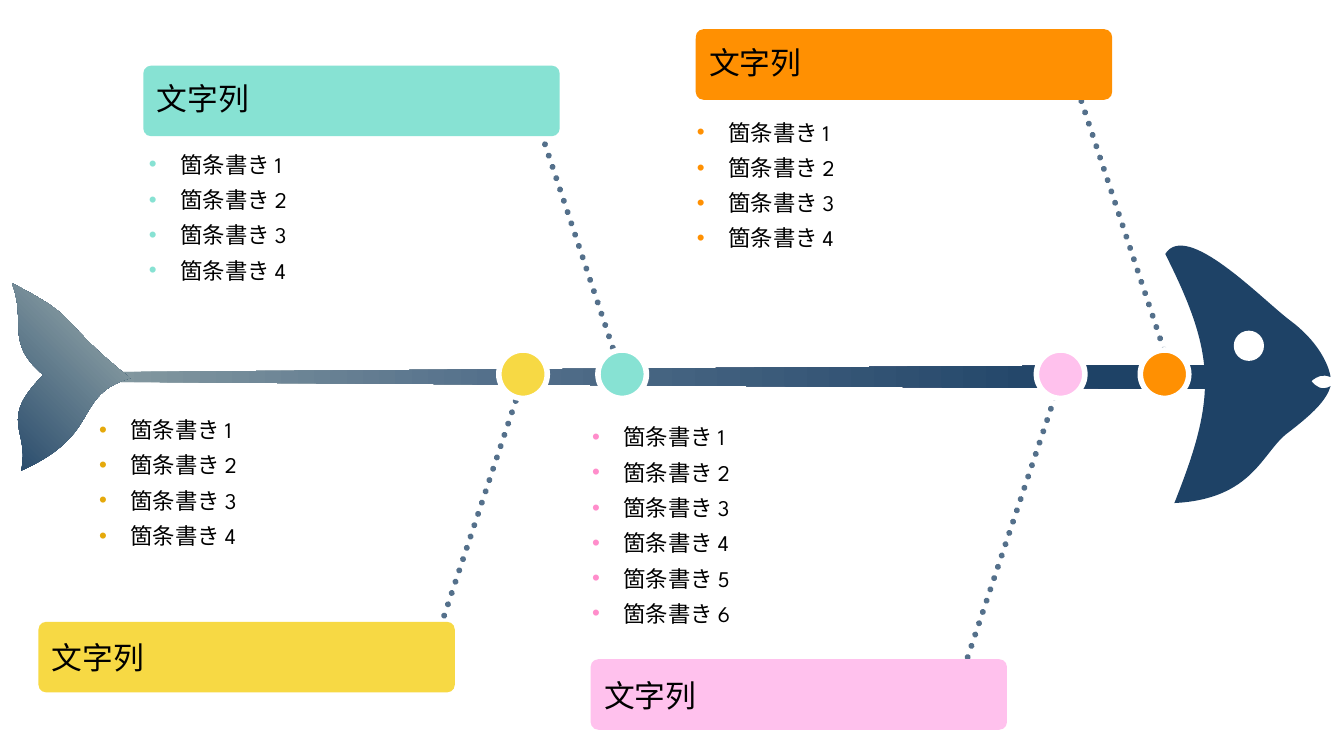
import math

import copy
import lxml.etree
import pptx
import pptx.dml.color
import pptx.enum.dml
import pptx.enum.shapes
import pptx.enum.text
import pptx.oxml.ns
import pptx.util

Pt = pptx.util.Pt
qn = pptx.oxml.ns.qn
MSO_SHAPE = pptx.enum.shapes.MSO_SHAPE
SHAPE_TO_FIT = pptx.enum.text.MSO_AUTO_SIZE.SHAPE_TO_FIT_TEXT


def color(value):
    return pptx.dml.color.RGBColor.from_string(value)


def add_outline(shapes, frame, rotation, start, segments):
    left, top, width, height = frame
    center_x, center_y = left + width / 2, top + height / 2
    cosine, sine = math.cos(math.radians(rotation)), math.sin(math.radians(rotation))
    builder = shapes.build_freeform(Pt(left), Pt(top))
    builder.add_line_segments([(Pt(left + width), Pt(top + height))], close=True)
    shape = builder.convert_to_shape()
    outline = next(shape._element.iter(qn("a:path")))
    for child in list(outline):
        outline.remove(child)
    for index, segment in enumerate([start, *segments]):
        tag = "a:moveTo" if index == 0 else "a:lnTo" if len(segment) == 2 else "a:cubicBezTo"
        command = lxml.etree.SubElement(outline, qn(tag))
        for x, y in zip(segment[::2], segment[1::2]):
            dx, dy = x - center_x, y - center_y
            local_x = Pt(width / 2 + dx * cosine + dy * sine)
            local_y = Pt(height / 2 - dx * sine + dy * cosine)
            lxml.etree.SubElement(command, qn("a:pt"), x=str(local_x), y=str(local_y))
    lxml.etree.SubElement(outline, qn("a:close"))
    shape.rotation = rotation
    shape.shadow.inherit = False
    shape.line.fill.background()
    return shape


presentation = pptx.Presentation()
presentation.slide_width = Pt(960)
presentation.slide_height = Pt(540)
slide = presentation.slides.add_slide(presentation.slide_layouts[6])

bones = [
    (314.6, 447.8, 372.2, 275),
    (386.6, 95, 444.2, 267.8),
    (691.2, 469.4, 755, 279),
    (769.7, 64.1, 835.3, 261.6),
]
for bone in bones:
    connector = slide.shapes.add_connector(
        pptx.enum.shapes.MSO_CONNECTOR.STRAIGHT, *[Pt(value) for value in bone]
    )
    connector.line.color.rgb = color("54708B")
    connector.line.width = Pt(4.25)
    connector.line.dash_style = pptx.enum.dml.MSO_LINE.ROUND_DOT
    properties = connector._element.spPr
    properties.find(qn("a:ln")).set("cap", "rnd")
    lxml.etree.SubElement(properties, qn("a:effectLst"))

spine = add_outline(slide.shapes, (72.7, 260.6, 799.2, 17.3), 0, (72.7, 269.3), [
    (73.4, 267.8, 80.6, 265.7, 85.7, 265.7),
    (863.3, 260.6),
    (868.3, 260.6, 871.9, 265, 871.9, 269.3),
    (871.9, 269.3),
    (871.9, 274.3, 868.3, 277.9, 863.3, 277.9),
    (82.8, 272.9),
    (77.8, 272.9, 72.7, 270.7, 72.7, 269.3),
])
head_group = slide.shapes.add_group_shape()
head = add_outline(head_group.shapes, (777.6, 192.2, 154.8, 151.9), 225, (936.7, 272.2), [
    (939.6, 275.8, 943.9, 279.4, 950.4, 275.8),
    (947.5, 285.8, 938.2, 295.2, 920.2, 308.9),
    (901.4, 322.6, 895.7, 356.4, 838.8, 359.3),
    (869, 283.7, 869, 254.2, 832.3, 181.4),
    (847.4, 157, 901.4, 213.8, 921.6, 229),
    (941, 243.4, 949, 259.9, 950.4, 269.3),
    (944.6, 267.1, 941, 268.6, 936.7, 272.2),
])
head.fill.solid()
head.fill.fore_color.rgb = color("1E4266")

eye = head_group.shapes.add_shape(MSO_SHAPE.OVAL, Pt(881.3), Pt(236.2), Pt(21.6), Pt(21.6))
eye.shadow.inherit = False
eye.fill.solid()
eye.fill.fore_color.rgb = color("FFFFFF")
eye.line.fill.background()

tail = add_outline(slide.shapes, (-35.3, 217.4, 108, 102.2), 225, (92.9, 270), [
    (51.1, 283, 74.2, 309.6, 15.1, 336.2),
    (21.6, 306, -2.2, 301, 31, 267.8),
    (2.9, 244.1, 19.4, 231.1, 8.6, 202.3),
    (60.5, 229, 38.2, 226.1, 92.9, 270),
])

gradients = [
    (spine, 0, [(0, "8499A0"), (0.35, "54708B"), (0.89, "1E4266")]),
    (tail, 270, [(0.18, "1E4266"), (0.79, "8499A0")]),
]
for shape, angle, stops in gradients:
    shape.fill.gradient()
    shape.fill.gradient_angle = angle
    stop_list = shape._element.spPr.find(qn("a:gradFill")).find(qn("a:gsLst"))
    while len(stop_list) < len(stops):
        stop_list.append(copy.deepcopy(stop_list[0]))
    for stop, (position, value) in zip(shape.fill.gradient_stops, stops):
        stop.position = position
        stop.color.rgb = color(value)

banners = [
    (102.4, 46.9, "87E2D3", 10),
    (27.5, 444.2, "F7D944", 12.2),
    (497, 20.9, "FF9002", 10),
    (421.9, 470.9, "FFC1ED", 12.2),
]
for left, top, fill, title_offset in banners:
    banner = slide.shapes.add_shape(
        MSO_SHAPE.ROUNDED_RECTANGLE, Pt(left), Pt(top), Pt(297.4), Pt(50.4)
    )
    banner.adjustments[0] = 0.11
    banner.shadow.inherit = False
    banner.fill.solid()
    banner.fill.fore_color.rgb = color(fill)
    banner.line.fill.background()
    title = slide.shapes.add_textbox(
        Pt(left + 9.6), Pt(top + title_offset), Pt(283.7), Pt(26.6)
    )
    frame_format = {
        "margin_left": 0, "margin_right": 0, "margin_top": 0, "margin_bottom": 0,
        "vertical_anchor": pptx.enum.text.MSO_ANCHOR.MIDDLE,
        "word_wrap": True, "auto_size": SHAPE_TO_FIT,
    }
    for name, value in frame_format.items():
        setattr(title.text_frame, name, value)
    paragraph = title.text_frame.paragraphs[0]
    paragraph.text = "文字列"
    for name, value in {"name": "League Spartan", "size": Pt(22)}.items():
        setattr(paragraph.runs[0].font, name, value)
    paragraph.runs[0].font.color.rgb = color("000000")

joints = [(356.3, "F7D944"), (427.1, "87E2D3"), (740.3, "FFC1ED"), (814.5, "FF9002")]
for left, fill in joints:
    joint = slide.shapes.add_shape(MSO_SHAPE.OVAL, Pt(left), Pt(250), Pt(34.6), Pt(34.6))
    joint.shadow.inherit = False
    joint.fill.solid()
    joint.fill.fore_color.rgb = color(fill)
    joint.line.color.rgb = color("FFFFFF")
    joint.line.width = Pt(4)

bullet_lists = [
    (99.3, 104.2, "87E2D3", 4),
    (490.7, 81.2, "FF9002", 4),
    (63.7, 293.8, "E5A90B", 4),
    (415.8, 299, "FF8DCB", 6),
]
for left, top, bullet_color, count in bullet_lists:
    box = slide.shapes.add_textbox(Pt(left), Pt(top), Pt(302.4), Pt(25.7 * count))
    frame = box.text_frame
    frame.word_wrap = True
    frame.auto_size = SHAPE_TO_FIT
    for number in range(1, count + 1):
        paragraph = frame.paragraphs[0] if number == 1 else frame.add_paragraph()
        paragraph.text = f"箇条書き {number}"
        paragraph.space_after = Pt(6)
        properties = paragraph._p.get_or_add_pPr()
        properties.set("marL", str(Pt(22.5)))
        properties.set("indent", str(-Pt(22.5)))
        bullet_fill = lxml.etree.SubElement(properties, qn("a:buClr"))
        lxml.etree.SubElement(bullet_fill, qn("a:srgbClr"), val=bullet_color)
        lxml.etree.SubElement(properties, qn("a:buFont"), typeface="Arial")
        lxml.etree.SubElement(properties, qn("a:buChar"), char="•")
        for name, value in {"name": "League Spartan", "size": Pt(16)}.items():
            setattr(paragraph.runs[0].font, name, value)
        paragraph.runs[0].font.color.rgb = color("000000")

presentation.save("out.pptx")
